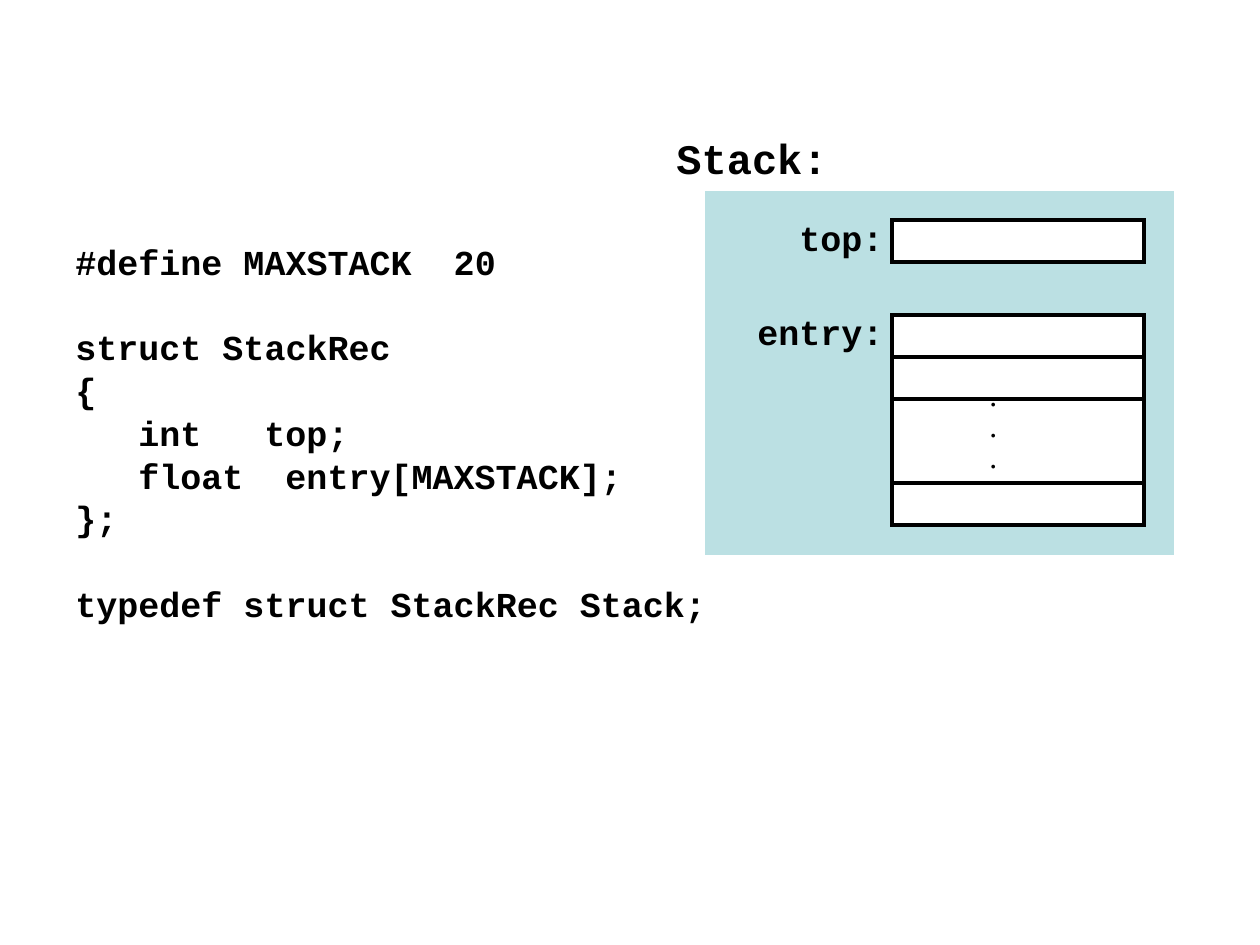
from pptx import Presentation
from pptx import util as u
from pptx.dml.color import RGBColor
from pptx.enum import shapes, text
from pptx.oxml.ns import qn
from lxml import etree

PX = u.Inches(1) / 126
BLACK = RGBColor(0x00, 0x00, 0x00)
WHITE = RGBColor(0xFF, 0xFF, 0xFF)
PALE_TEAL = RGBColor(0xBB, 0xE0, 0xE3)
MONO = "Courier New"
SERIF = "Times New Roman"


def px(*lengths):
    return [round(length * PX) for length in lengths]


def add_text(place, lines, size, font=MONO, bold=True, line_spacing=1.0,
             align=text.PP_ALIGN.LEFT):
    """Add a text box; each line is (wording, space before in points, indent in px)."""
    frame = slide.shapes.add_textbox(*px(*place)).text_frame
    frame.word_wrap = True
    for number, (wording, space_before, indent) in enumerate(lines):
        paragraph = frame.add_paragraph() if number else frame.paragraphs[0]
        paragraph.alignment = align
        paragraph.line_spacing = line_spacing
        paragraph.space_before = u.Pt(space_before)
        if indent:
            paragraph._p.get_or_add_pPr().set("marL", str(px(indent)[0]))
        run = paragraph.add_run()
        run.text = wording
        run.font.name = font
        run.font.size = u.Pt(size)
        run.font.bold = bold
        run.font.color.rgb = BLACK


prs = Presentation()
prs.slide_width, prs.slide_height = px(1260, 945)
slide = prs.slides.add_slide(prs.slide_layouts[6])

# Declaration of the stack type
LINE_GAP, BLOCK_GAP, MEMBER_INDENT = 10, 34.5, 63
code = [
    ("#define MAXSTACK  20", 0, 0),
    ("struct StackRec", BLOCK_GAP, 0),
    ("{", LINE_GAP, 0),
    ("int   top;", LINE_GAP, MEMBER_INDENT),
    ("float  entry[MAXSTACK];", LINE_GAP, MEMBER_INDENT),
    ("};", LINE_GAP, 0),
    ("typedef struct StackRec Stack;", BLOCK_GAP, 0),
]
add_text((63, 249, 683, 394), code, 20, line_spacing=0.6)
add_text((662, 126, 178, 63), [("Stack:", 0, 0)], 24, align=text.PP_ALIGN.RIGHT)

# Stack record with its two members
FIELD_LEFT, FIELD_WIDTH, CELL = 892, 252, 42
ENTRY_TOP = 315
boxes = [
    ((703, 189, 473, 368), PALE_TEAL, WHITE),
    ((FIELD_LEFT, 220, FIELD_WIDTH, CELL), WHITE, BLACK),
    ((FIELD_LEFT, ENTRY_TOP, FIELD_WIDTH, 5 * CELL), WHITE, BLACK),
]
for place, fill, outline in boxes:
    box = slide.shapes.add_shape(shapes.MSO_SHAPE.RECTANGLE, *px(*place))
    box.shadow.inherit = False
    box.fill.solid()
    box.fill.fore_color.rgb = fill
    box.line.color.rgb = outline
    box.line.width = u.Pt(2)
    etree.SubElement(box.line._get_or_add_ln(), qn("a:miter"), lim="800000")

for cells_above in (1, 2, 4):
    y = ENTRY_TOP + cells_above * CELL
    divider = slide.shapes.add_connector(
        shapes.MSO_CONNECTOR.STRAIGHT, *px(FIELD_LEFT, y, FIELD_LEFT + FIELD_WIDTH, y))
    divider.line.color.rgb = BLACK
    divider.line.width = u.Pt(2)
    etree.SubElement(divider._element.spPr, qn("a:effectLst"))

add_text((977, 388, 53, 96), [(".", 9, 0)] * 3, 18, SERIF, False, 0.4)
add_text((745, 304, 158, 54), [("entry:", 0, 0)], 20)
add_text((787, 210, 116, 54), [("top:", 0, 0)], 20)

prs.save("out.pptx")
